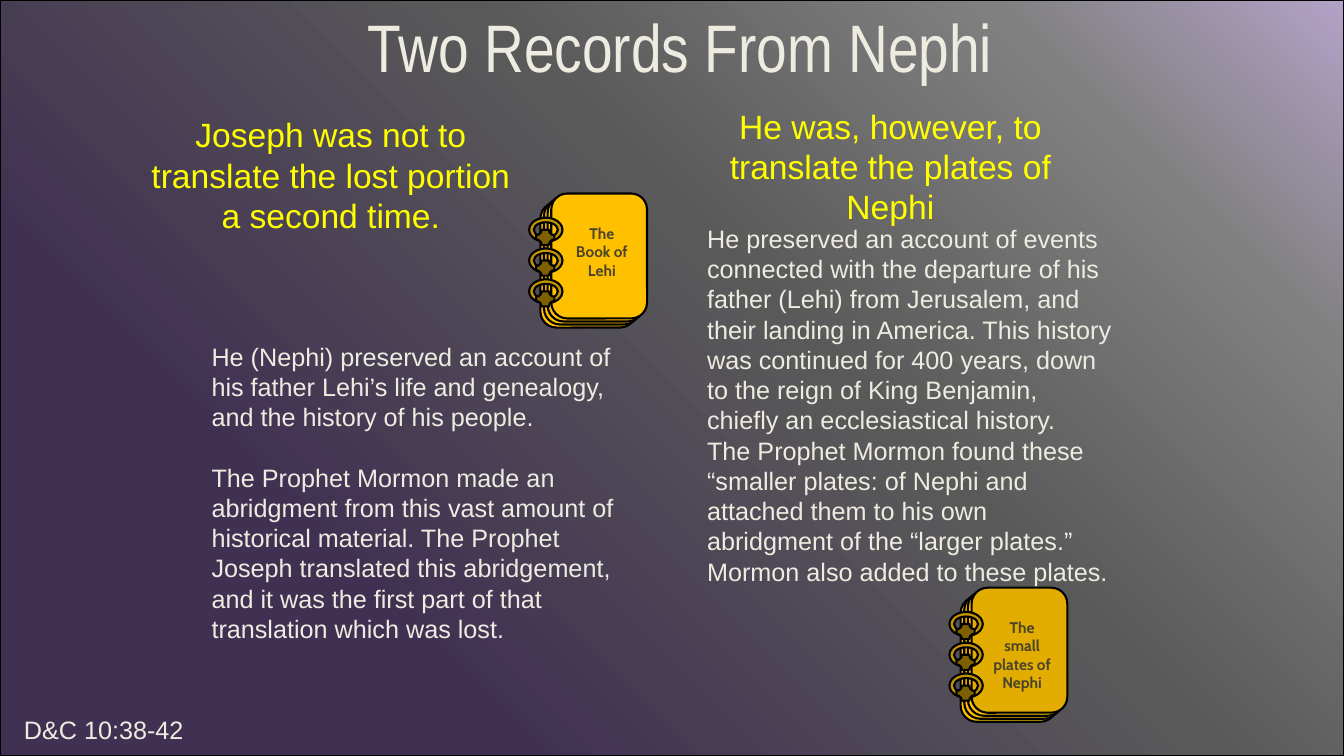
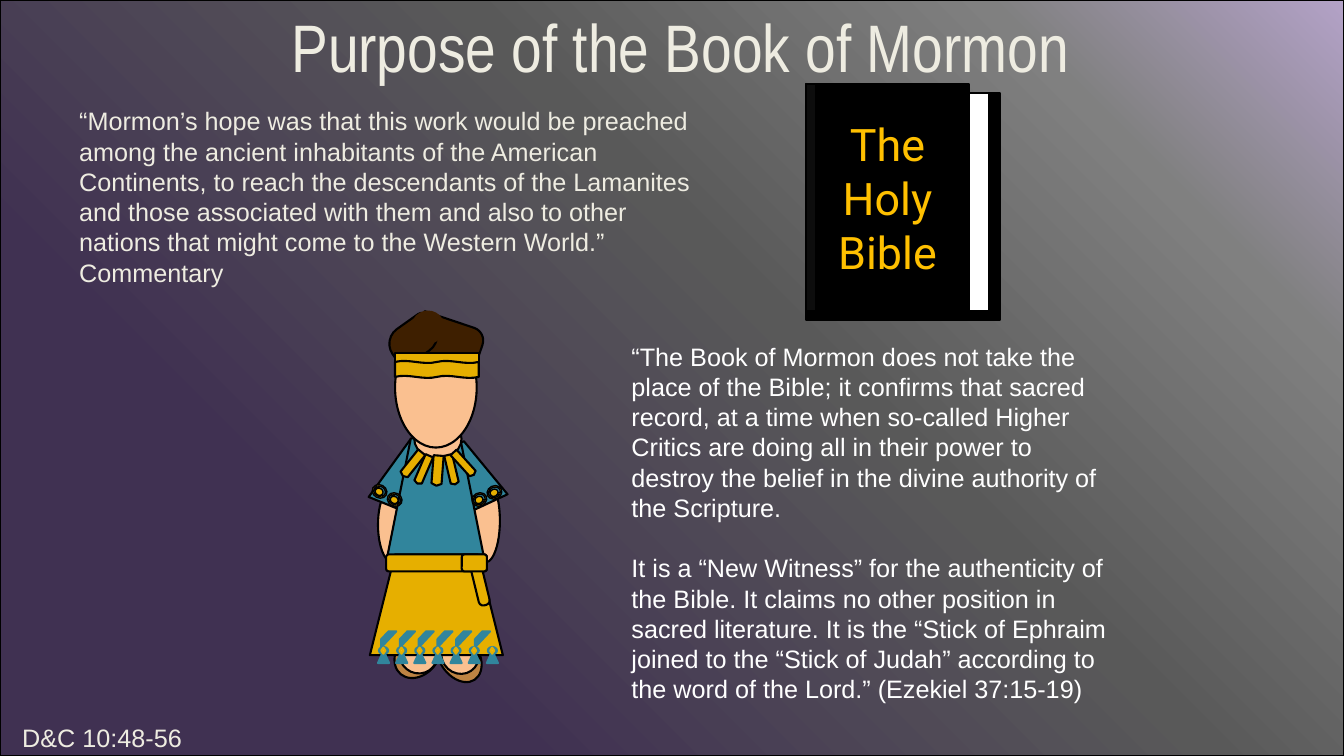
from dataclasses import dataclass

from lxml import etree
from pptx import Presentation
from pptx.dml.color import RGBColor
from pptx.enum.shapes import MSO_SHAPE as Preset
from pptx.enum.text import MSO_ANCHOR as Anchor, MSO_AUTO_SIZE as AutoSize, PP_ALIGN as Align
from pptx.oxml.ns import qn
from pptx.util import Pt


@dataclass(frozen=True)
class Theme:
    cream: str = "EEECE1"
    white: str = "FFFFFF"
    yellow: str = "FFFF00"
    black: str = "000000"
    spine: str = "0D0D0D"
    amber: str = "FFC000"
    dark_amber: str = "E2AC00"
    ring: str = "C49500"
    knob: str = "7E6000"
    olive: str = "4A452A"
    skin: str = "FAC090"
    leather: str = "BD8343"
    teal: str = "31859C"
    gold: str = "E6AF00"
    hair: str = "3E1F00"
    backdrop: tuple = ((0, "B3A2C7"), (17, "808080"), (42, "595959"), (75, "403152"))
    backdrop_angle: int = 135
    title_font: str = "Arial Narrow"
    body_font: str = "Arial"
    label_font: str = "Cabin"
    cover_font: str = "Roboto"
    title_size: float = 48
    cover_size: float = 32
    heading_size: float = 24
    body_size: float = 18
    label_size: float = 11
    outline: float = 1.5
    thin_outline: float = 1
    blank_line: float = 21.6


THEME = Theme()
WIDTH, HEIGHT = 960, 540
TITLE_FRAME = (174, 0, 624, 65.5)

RECORDS = {
    "title": "Two Records From Nephi",
    "reference": ("D&C 10:38-42", (10, 507, 306, 29)),
    "headings": [
        ("Joseph was not to translate the lost portion a second time.", (94.5, 78, 283.5, 94)),
        ("He was, however, to translate the plates of Nephi", (510, 72, 252, 94)),
    ],
    # paragraphs, frame, colour, space between paragraphs
    "bodies": [
        (["He (Nephi) preserved an account of his father Lehi’s life and genealogy, and the "
          "history of his people.",
          "The Prophet Mormon made an abridgment from this vast amount of historical material. "
          "The Prophet Joseph translated this abridgement, and it was the first part of that "
          "translation which was lost."],
         (144, 240, 306, 225), THEME.cream, THEME.blank_line),
        (["He preserved an account of events connected with the departure of his father (Lehi) "
          "from Jerusalem, and their landing in America. This history was continued for 400 "
          "years, down to the reign of King Benjamin, chiefly an ecclesiastical history.",
          "The Prophet Mormon found these “smaller plates: of Nephi and attached them to his own "
          "abridgment of the “larger plates.” Mormon also added to these plates."],
         (498, 156, 306, 269), THEME.cream, 0),
    ],
}

PURPOSE = {
    "title": "Purpose of the Book of Mormon",
    "reference": ("D&C 10:48-56", (8.8, 512.5, 306, 29)),
    "headings": [],
    "bodies": [
        (["“Mormon’s hope was that this work would be preached among the ancient inhabitants of "
          "the American Continents, to reach the descendants of the Lamanites and those "
          "associated with them and also to other nations that might come to the Western World.”",
          "Commentary"],
         (49.5, 72, 460, 138), THEME.cream, 0),
        (["“The Book of Mormon does not take the place of the Bible; it confirms that sacred "
          "record, at a time when so-called Higher Critics are doing all in their power to "
          "destroy the belief in the divine authority of the Scripture.",
          "It is a “New Witness” for the authenticity of the Bible. It claims no other position "
          "in sacred literature. It is the “Stick of Ephraim joined to the “Stick of Judah” "
          "according to the word of the Lord.” (Ezekiel 37:15-19)"],
         (444, 240, 360, 269), THEME.white, THEME.blank_line),
    ],
}

# label, left, top, front cover colour
NOTEBOOKS = [
    ("The Book of Lehi", 378, 138.2, THEME.amber),
    ("The small plates of Nephi", 678.2, 419.8, THEME.dark_amber),
]

# preset, frame, fill, rotation, adjustments
LIMBS_AND_TUNIC = [
    (Preset.OVAL, (313.9, 448.6, 28, 40.3), THEME.leather, 326.3, ()),
    (Preset.OVAL, (315.4, 453.6, 26.6, 28), THEME.skin, 326.3, ()),
    (Preset.OVAL, (283.7, 447.8, 29.5, 38.2), THEME.leather, 39.8, ()),
    (Preset.OVAL, (285.1, 454.3, 27.4, 26.6), THEME.skin, 39.8, ()),
    (Preset.OVAL, (336.2, 342, 20.9, 59.8), THEME.skin, 0, ()),
    (Preset.OVAL, (270, 347.8, 20.9, 54), THEME.skin, 0, ()),
    (Preset.TRAPEZOID, (318.2, 315.4, 36, 47.5), THEME.teal, 335, (0.34,)),
    (Preset.TRAPEZOID, (271.4, 313.9, 36, 49.7), THEME.teal, 22.1, (0.34,)),
    (Preset.TRAPEZOID, (275.8, 313.2, 70.6, 88.6), THEME.teal, 0, (0.25,)),
    (Preset.OVAL, (295.9, 299.5, 33.8, 28), THEME.skin, 0, ()),
]
# left, top, thickness, rotation
NECKLACE = [(283.7, 328.3, 6.5, 128.6), (291.6, 332.6, 5.8, 113.3), (301.7, 332.6, 7.2, 94.4),
            (311.8, 332.6, 5.8, 76.6), (320.4, 328.3, 5.8, 47.8)]
# left, top, rotation
SLEEVE_BUTTONS = [(265.7, 346.3, 28.3), (276.5, 352.1, 28.3),
                  (337, 352.1, 333.7), (347.8, 347, 333.7)]
SKIRT = (Preset.TRAPEZOID, (264.2, 396, 95, 72), THEME.gold, 0, (0.25,))
HEAD = [
    (Preset.OVAL, (282.2, 234, 58.3, 85.7), THEME.skin, 0, ()),
    (Preset.ROUND_2_DIAG_RECTANGLE, (297.4, 229, 46.8, 29.5), THEME.hair, 18.6, (0, 0.32)),
    (Preset.ROUND_2_DIAG_RECTANGLE, (277.2, 229.7, 36, 25.9), THEME.hair, 324.7, (0.5, 0.17)),
    (Preset.RECTANGLE, (282.2, 252, 59.8, 12.2), THEME.gold, 0, ()),
    (Preset.DOUBLE_WAVE, (282.2, 257.8, 59.8, 12.2), THEME.gold, 0, ()),
]
HAIR_TOP = (293.8, 221.8, 23.8, 23.8)
BELT = [
    (Preset.ROUNDED_RECTANGLE, (275.8, 396, 72, 12.2), THEME.gold, 0, ()),
    (Preset.ROUNDED_RECTANGLE, (339.1, 402.5, 7.9, 30.2), THEME.gold, 346.3, (0.41,)),
    (Preset.ROUNDED_RECTANGLE, (329.8, 396, 18, 12.2), THEME.gold, 0, ()),
]

BIBLE_TITLE = "The Holy Bible"
BIBLE_BACK = (576, 66.2, 138.2, 162.7)
BIBLE_PAGES = (590.4, 66.2, 115.9, 156.2)
BIBLE_COVER = (576, 59.8, 115.9, 162.7)
BIBLE_SPINE = (576, 59.8, 7.2, 162.7)


def rgb(color):
    return RGBColor.from_string(color)


def add_figure(parent, preset, frame, fill, rotation=0, adjustments=(),
               line=THEME.black, line_width=THEME.outline):
    """Add a flat preset shape; a line of None leaves it without outline."""
    shape = parent.shapes.add_shape(preset, *map(Pt, frame))
    shape.shadow.inherit = False
    shape.rotation = rotation
    for index, value in enumerate(adjustments):
        shape.adjustments[index] = value
    shape.fill.solid()
    shape.fill.fore_color.rgb = rgb(fill)
    if line is None:
        shape.line.fill.background()
    else:
        shape.line.color.rgb = rgb(line)
        shape.line.width = Pt(line_width)
    return shape


def write(box, paragraphs, font, size, color, align=Align.LEFT, anchor=Anchor.TOP,
          bold=False, gap=0):
    frame = box.text_frame
    frame.word_wrap = True
    frame.auto_size = AutoSize.NONE
    frame.vertical_anchor = anchor
    for index, text in enumerate(paragraphs):
        para = frame.add_paragraph() if index else frame.paragraphs[0]
        para.text = text
        para.alignment = align
        if index and gap:
            para.space_before = Pt(gap)
        para.font.name = font
        para.font.size = Pt(size)
        para.font.bold = bold
        para.font.color.rgb = rgb(color)


def add_text(parent, paragraphs, frame, *style, **options):
    write(parent.shapes.add_textbox(*map(Pt, frame)), paragraphs, *style, **options)


def add_backdrop(page):
    """Cover the page with the outlined diagonal gradient, behind everything else."""
    backdrop = add_figure(page, Preset.RECTANGLE, (0, 0, WIDTH, HEIGHT), THEME.black)
    gradient = etree.Element(qn("a:gradFill"), rotWithShape="1")
    stops = etree.SubElement(gradient, qn("a:gsLst"))
    for position, color in THEME.backdrop:
        stop = etree.SubElement(stops, qn("a:gs"), pos=str(position * 1000))
        etree.SubElement(stop, qn("a:srgbClr"), val=color)
    etree.SubElement(gradient, qn("a:lin"), ang=str(THEME.backdrop_angle * 60000), scaled="0")
    properties = backdrop.element.spPr
    properties.replace(properties.find(qn("a:solidFill")), gradient)
    page.shapes.element.insert(2, backdrop.element)


def add_page(deck, content):
    page = deck.slides.add_slide(deck.slide_layouts.get_by_name("Title Only"))
    add_backdrop(page)
    title = page.shapes.title
    title.left, title.top, title.width, title.height = map(Pt, TITLE_FRAME)
    write(title, [content["title"]], THEME.title_font, THEME.title_size, THEME.cream,
          align=Align.CENTER)
    reference, frame = content["reference"]
    add_text(page, [reference], frame, THEME.body_font, THEME.body_size, THEME.cream)
    for heading, frame in content["headings"]:
        add_text(page, [heading], frame, THEME.body_font, THEME.heading_size, THEME.yellow,
                 align=Align.CENTER)
    for paragraphs, frame, color, gap in content["bodies"]:
        add_text(page, paragraphs, frame, THEME.body_font, THEME.body_size, color, gap=gap)
    return page


def add_notebook(page, label, left, top, cover):
    group = page.shapes.add_group_shape()
    for index, fill in enumerate([THEME.amber] * 3 + [cover]):
        frame = (left + 8 + 2.6 * index, top + 6.5 - 2.16 * index, 68.4, 89.3)
        add_figure(group, Preset.ROUNDED_RECTANGLE, frame, fill)
    ring_tops = [top + 17.3 + 22 * index for index in range(3)]
    for ring_top in ring_tops:
        add_figure(group, Preset.DONUT, (left, ring_top, 23.8, 17.3), THEME.ring,
                   adjustments=(0.19,))
    for ring_top in ring_tops:
        add_figure(group, Preset.PLAQUE, (left + 5, ring_top + 8.6, 13, 10.8), THEME.knob,
                   adjustments=(0.36,))
    add_text(group, [label], (left + 23.8, top + 18, 56.2, 60), THEME.label_font,
             THEME.label_size, THEME.olive, align=Align.CENTER, bold=True)


def add_fringe(group):
    for index in range(6):
        add_figure(group, Preset.DIAGONAL_STRIPE, (272.2 + 13.4 * index, 451, 10.8, 11.5),
                   THEME.teal, line=THEME.teal)
    for index in range(7):
        left = 270 + 12.96 * index
        add_figure(group, Preset.ISOSCELES_TRIANGLE, (left, 465, 7.9, 8.6), THEME.teal,
                   line=THEME.teal)
        add_figure(group, Preset.OVAL, (left + 0.7, 462.2, 6.5, 5), THEME.teal, line=THEME.teal)
        add_figure(group, Preset.DIAMOND, (left + 2.4, 462.6, 2.9, 4.3), THEME.amber,
                   line=THEME.gold)


def add_man(page):
    group = page.shapes.add_group_shape()
    for part in LIMBS_AND_TUNIC:
        add_figure(group, *part)
    for left, top, thickness, rotation in NECKLACE:
        add_figure(group, Preset.PENTAGON, (left, top, 21.6, thickness), THEME.gold, rotation,
                   (0.22,))
    for left, top, rotation in SLEEVE_BUTTONS:
        add_figure(group, Preset.NO_SYMBOL, (left, top, 10.8, 9.4), THEME.gold, rotation,
                   (0.11,), line_width=THEME.thin_outline)
        add_figure(group, Preset.OVAL, (left + 2.2, top + 2.5, 5.8, 5), THEME.gold, rotation,
                   line_width=THEME.thin_outline)
    add_figure(group, *SKIRT)
    add_fringe(group)
    for part in HEAD:
        add_figure(group, *part)
    add_figure(group, Preset.OVAL, HAIR_TOP, THEME.hair, line=None)
    for part in BELT:
        add_figure(group, *part)


def add_bible(page):
    group = page.shapes.add_group_shape()
    add_figure(group, Preset.RECTANGLE, BIBLE_BACK, THEME.black)
    add_figure(group, Preset.RECTANGLE, BIBLE_PAGES, THEME.white)
    cover = add_figure(group, Preset.RECTANGLE, BIBLE_COVER, THEME.black)
    write(cover, [BIBLE_TITLE], THEME.cover_font, THEME.cover_size, THEME.amber,
          align=Align.CENTER, anchor=Anchor.MIDDLE)
    add_figure(group, Preset.RECTANGLE, BIBLE_SPINE, THEME.spine)


def main():
    deck = Presentation()
    deck.slide_width, deck.slide_height = Pt(WIDTH), Pt(HEIGHT)
    records = add_page(deck, RECORDS)
    for notebook in NOTEBOOKS:
        add_notebook(records, *notebook)
    purpose = add_page(deck, PURPOSE)
    add_man(purpose)
    add_bible(purpose)
    deck.save("out.pptx")


if __name__ == "__main__":
    main()
